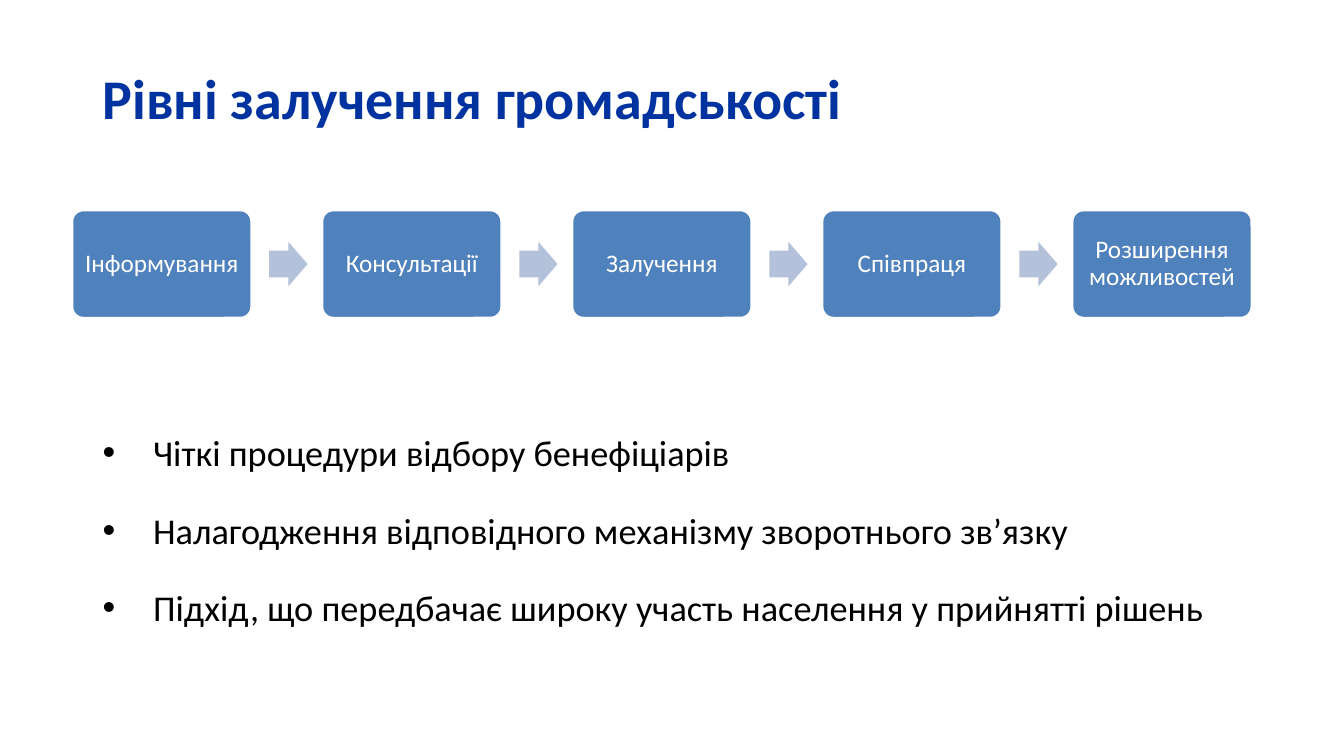
from lxml.etree import SubElement
from pptx import Presentation
from pptx.dml.color import RGBColor
from pptx.enum.shapes import MSO_SHAPE
from pptx.enum.text import MSO_ANCHOR, PP_ALIGN
from pptx.oxml.ns import qn
from pptx.util import Inches, Pt

TITLE = "Рівні залучення громадськості"
LEVELS = ["Інформування", "Консультації", "Залучення", "Співпраця", "Розширення можливостей"]
PRINCIPLES = [
    "Чіткі процедури відбору бенефіціарів",
    "Налагодження відповідного механізму зворотнього зв’язку",
    "Підхід, що передбачає широку участь населення у прийнятті рішень",
]

FONT = "Calibri"
NAVY, BLUE, PALE_BLUE, WHITE, BLACK = "0033A0", "4F81BD", "B3C1DB", "FFFFFF", "000000"

LEVEL_LEFT, LEVEL_TOP, LEVEL_STEP = 0.72, 2.09, 2.48
LEVEL_WIDTH, LEVEL_HEIGHT = 1.77, 1.06
ARROW_WIDTH, ARROW_HEIGHT, ARROW_GAP = 0.38, 0.44, 0.18


def color(hex_string):
    return RGBColor.from_string(hex_string)


def add_bullet(paragraph, indent):
    properties = paragraph._p.get_or_add_pPr()
    properties.set("marL", str(Inches(indent)))
    properties.set("indent", str(-Inches(indent)))
    SubElement(properties, qn("a:buFont"), typeface="Arial")
    SubElement(properties, qn("a:buChar"), char="•")


def write_text(shape, lines, size, hex_string, bold=False, align=PP_ALIGN.LEFT,
               line_spacing=0.9, space_before=0, bullet_indent=None, inset=None):
    frame = shape.text_frame
    frame.word_wrap = True
    frame.vertical_anchor = MSO_ANCHOR.MIDDLE
    if inset is not None:
        frame.margin_left = frame.margin_right = Inches(inset)
        frame.margin_top = frame.margin_bottom = Inches(inset)
    for index, line in enumerate(lines):
        paragraph = frame.add_paragraph() if index else frame.paragraphs[0]
        if bullet_indent:
            add_bullet(paragraph, bullet_indent)
        paragraph.alignment = align
        paragraph.line_spacing = line_spacing
        if index:
            paragraph.space_before = Pt(space_before)
        run = paragraph.add_run()
        run.text = line
        run.font.name = FONT
        run.font.size = Pt(size)
        run.font.bold = bold
        run.font.color.rgb = color(hex_string)


def add_filled_shape(slide, kind, left, top, width, height, fill, adjustments, line=None):
    shape = slide.shapes.add_shape(kind, Inches(left), Inches(top), Inches(width), Inches(height))
    shape.shadow.inherit = False
    for index, value in enumerate(adjustments):
        shape.adjustments[index] = value
    shape.fill.solid()
    shape.fill.fore_color.rgb = color(fill)
    if line:
        shape.line.color.rgb = color(line)
        shape.line.width = Pt(1)
    else:
        shape.line.fill.background()
    return shape


def add_levels(slide):
    arrow_top = LEVEL_TOP + (LEVEL_HEIGHT - ARROW_HEIGHT) / 2
    for index, level in enumerate(LEVELS):
        left = LEVEL_LEFT + index * LEVEL_STEP
        box = add_filled_shape(slide, MSO_SHAPE.ROUNDED_RECTANGLE, left, LEVEL_TOP,
                               LEVEL_WIDTH, LEVEL_HEIGHT, BLUE, [0.1], line=WHITE)
        write_text(box, [level], 18, WHITE, align=PP_ALIGN.CENTER, inset=0.07)
        if index < len(LEVELS) - 1:
            add_filled_shape(slide, MSO_SHAPE.RIGHT_ARROW, left + LEVEL_WIDTH + ARROW_GAP,
                             arrow_top, ARROW_WIDTH, ARROW_HEIGHT, PALE_BLUE, [0.6, 0.5])


def main():
    presentation = Presentation()
    presentation.slide_width, presentation.slide_height = Inches(13.33), Inches(7.5)
    slide = presentation.slides.add_slide(presentation.slide_layouts[6])

    title = slide.shapes.add_textbox(Inches(0.92), Inches(0.4), Inches(11.5), Inches(1.21))
    write_text(title, [TITLE], 40, NAVY, bold=True)
    add_levels(slide)
    principles = slide.shapes.add_textbox(Inches(0.92), Inches(3.9), Inches(11.53), Inches(2.49))
    write_text(principles, PRINCIPLES, 25.9, BLACK, line_spacing=1.5, space_before=9,
               bullet_indent=0.5)
    presentation.save("out.pptx")


if __name__ == "__main__":
    main()
